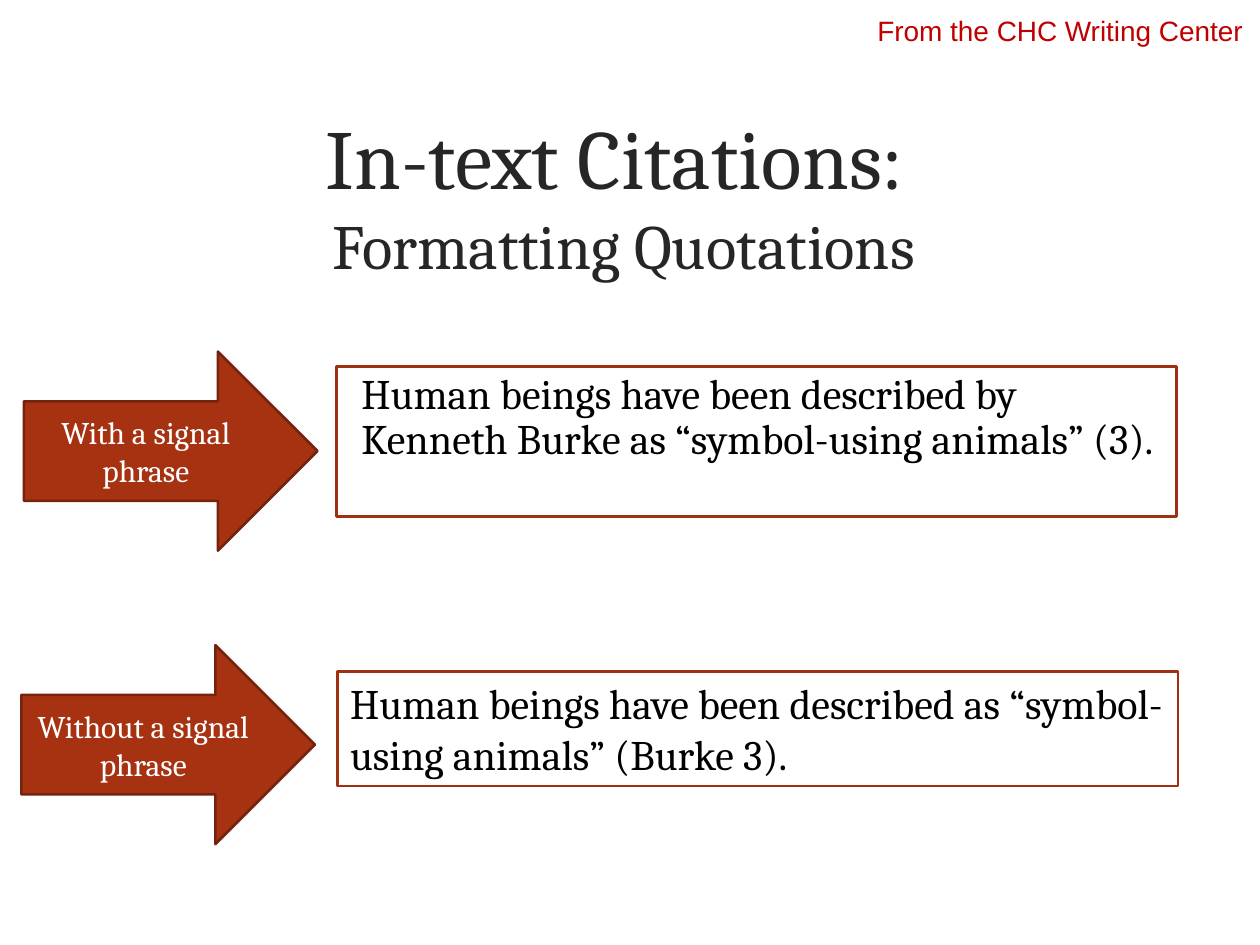
"""Build a slide on formatting quotations in in-text citations."""
import pptx
import pptx.util
import pptx.dml.color
import pptx.enum.shapes
import pptx.enum.text

Inches = pptx.util.Inches
Pt = pptx.util.Pt
SHAPE = pptx.enum.shapes.MSO_SHAPE
ALIGN = pptx.enum.text.PP_ALIGN
ANCHOR = pptx.enum.text.MSO_ANCHOR
HUES = {
    "title": "262626", "note": "C00000", "arrow": "A63212", "edge": "75230C",
    "frame": "9F3011", "white": "FFFFFF", "black": "000000",
}


class Deck:
    """Holds the style and the current slide."""

    def __init__(self):
        self.prs = pptx.Presentation()
        self.prs.slide_width = Inches(10)
        self.prs.slide_height = Inches(7.5)
        self.slide = self.prs.slides.add_slide(self.prs.slide_layouts[6])
        self.serif = "Cambria"
        self.sans = "Arial"

    def hue(self, name):
        return pptx.dml.color.RGBColor.from_string(HUES[name])

    def font(self, font, size, color, face):
        font.size = Pt(size)
        font.name = face
        font.color.rgb = self.hue(color)

    def frame(self, shape, align, anchor):
        box = shape.text_frame
        box.word_wrap = True
        box.vertical_anchor = anchor
        par = box.paragraphs[0]
        par.alignment = align
        return par

    def text(self, area, lines, color, face):
        shape = self.slide.shapes.add_textbox(*map(Inches, area))
        par = self.frame(shape, ALIGN.CENTER, ANCHOR.MIDDLE)
        for i, (words, size) in enumerate(lines):
            if i:
                par.add_line_break()
            run = par.add_run()
            run.text = words
            self.font(run.font, size, color, face)

    def shape(self, kind, area, fill, line):
        shape = self.slide.shapes.add_shape(kind, *map(Inches, area))
        shape.shadow.inherit = False
        shape.fill.solid()
        shape.fill.fore_color.rgb = self.hue(fill)
        shape.line.color.rgb = self.hue(line)
        shape.line.width = Pt(1.5)
        return shape

    def arrow(self, left, top, words):
        shape = self.shape(SHAPE.RIGHT_ARROW, (left, top, 2.33, 1.58), "arrow", "edge")
        par = self.frame(shape, ALIGN.CENTER, ANCHOR.MIDDLE)
        par.text = words
        self.font(par.font, 18, "white", self.serif)

    def quote(self, left, top, high, words, indent=0, space=1.0):
        shape = self.shape(SHAPE.RECTANGLE, (left, top, 6.67, high), "white", "frame")
        par = self.frame(shape, ALIGN.LEFT, ANCHOR.TOP)
        par.text = words
        par.line_spacing = space
        props = par._p.get_or_add_pPr()
        props.set("marL", str(Inches(indent)))
        props.set("indent", "0")
        self.font(par.font, 24, "black", self.serif)

    def save(self):
        self.prs.save("out.pptx")


def main():
    deck = Deck()
    title = [("In-text Citations: ", 48), ("Formatting Quotations", 36)]
    deck.text((0.55, 0.75, 8.8, 1.58), title, "title", deck.serif)
    note = [("From the CHC Writing Center", 16)]
    deck.text((6.83, 0.04, 3.17, 0.4), note, "note", deck.sans)
    deck.arrow(0.19, 2.79, "With a signal phrase")
    deck.arrow(0.17, 5.12, "Without a signal phrase")
    deck.quote(2.67, 2.91, 1.19,
               "Human beings have been described by Kenneth Burke as "
               "“symbol-using animals” (3).", indent=0.1, space=0.9)
    deck.quote(2.68, 5.33, 0.91,
               "Human beings have been described as “symbol-using animals” "
               "(Burke 3).")
    deck.save()


if __name__ == "__main__":
    main()
